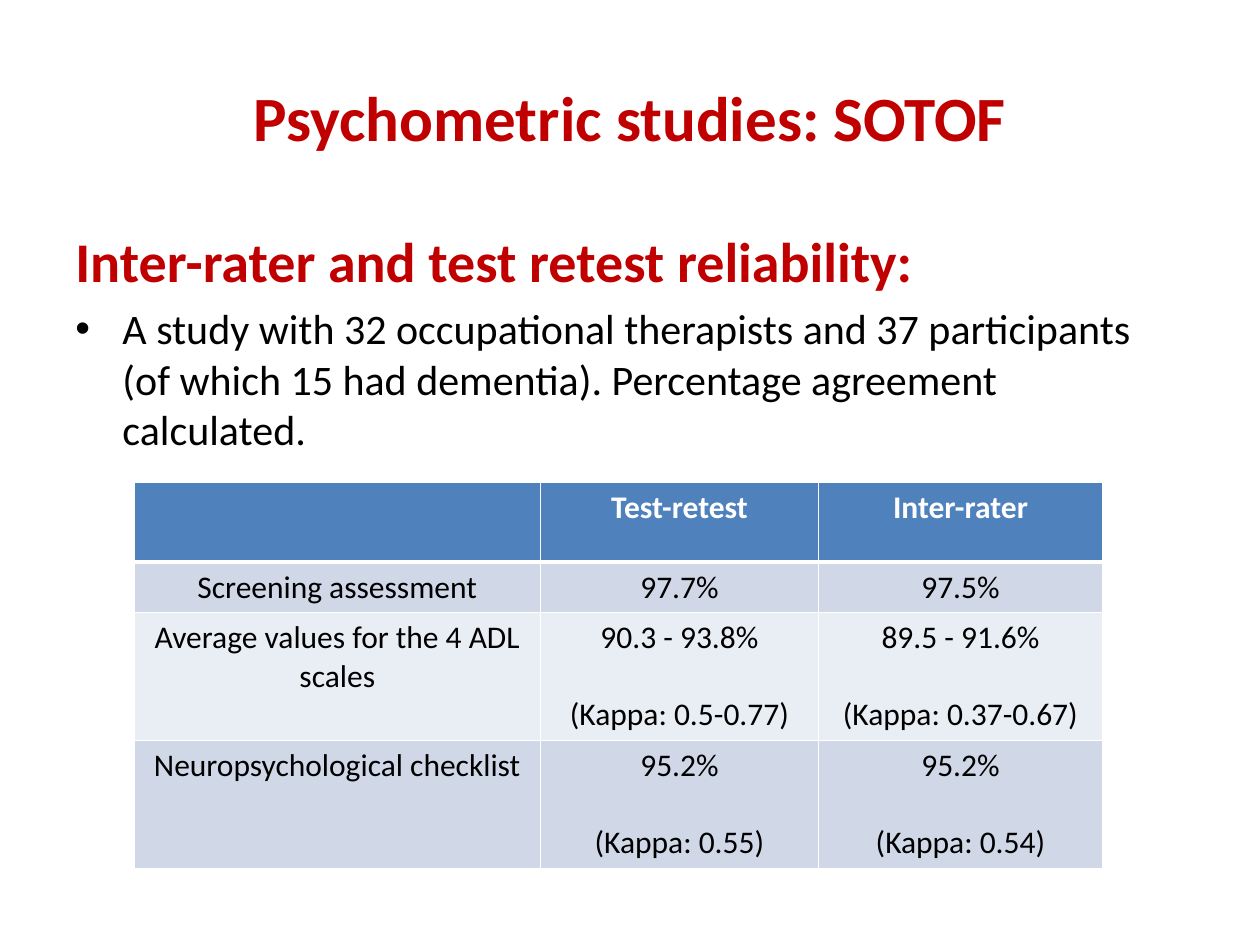
from dataclasses import dataclass

from lxml import etree
from pptx import Presentation
from pptx.dml.color import RGBColor
from pptx.enum.text import MSO_ANCHOR, PP_ALIGN
from pptx.oxml.ns import qn
from pptx.util import Cm, Pt

CENTER, LEFT = PP_ALIGN.CENTER, PP_ALIGN.LEFT
TOP, MIDDLE = MSO_ANCHOR.TOP, MSO_ANCHOR.MIDDLE
BLANK_LAYOUT = 6


@dataclass(frozen=True)
class Theme:
    font: str = "Calibri"
    accent: str = "C00000"
    ink: str = "000000"
    white: str = "FFFFFF"
    header: str = "4F81BD"
    bands: tuple = ("D0D8E8", "E9EDF4")
    title_size: int = 36
    heading_size: int = 32
    body_size: int = 24
    table_size: int = 18
    body_gap: int = 5
    cell_gap: int = 22
    thin_line: int = 1
    thick_line: int = 3


class SlideBuilder:
    def __init__(self, slide, theme):
        self.slide = slide
        self.theme = theme

    def style(self, paragraph, size, color, bold=False, align=LEFT):
        paragraph.alignment = align
        font = paragraph.font
        font.name = self.theme.font
        font.size = Pt(size)
        font.bold = bold
        font.color.rgb = RGBColor.from_string(color)

    def text_frame(self, left, top, width, height, anchor=TOP):
        box = self.slide.shapes.add_textbox(Cm(left), Cm(top), Cm(width), Cm(height))
        frame = box.text_frame
        frame.word_wrap = True
        frame.vertical_anchor = anchor
        return frame

    def title(self, text):
        paragraph = self.text_frame(1.27, 0.76, 22.86, 3.18, MIDDLE).paragraphs[0]
        paragraph.text = text
        self.style(paragraph, self.theme.title_size, self.theme.accent, True, CENTER)

    def body(self, heading, bullet):
        frame = self.text_frame(1.27, 4.45, 22.86, 12.57)
        first = frame.paragraphs[0]
        first.text = heading
        self.style(first, self.theme.heading_size, self.theme.accent, True)
        item = frame.add_paragraph()
        item.text = bullet
        item.space_before = Pt(self.theme.body_gap)
        self.add_bullet(item)
        self.style(item, self.theme.body_size, self.theme.ink)

    def add_bullet(self, paragraph):
        properties = paragraph._p.get_or_add_pPr()
        indent = Cm(0.95)
        properties.set("marL", str(indent))
        properties.set("indent", str(-indent))
        etree.SubElement(properties, qn("a:buFont"), typeface="Arial")
        etree.SubElement(properties, qn("a:buChar"), char="•")

    def table(self, rows, left, top, widths, heights):
        frame = self.slide.shapes.add_table(
            len(rows), len(widths), Cm(left), Cm(top), Cm(sum(widths)), Cm(sum(heights)))
        table = frame.table
        for column, width in zip(table.columns, widths):
            column.width = Cm(width)
        for row, height in zip(table.rows, heights):
            row.height = Cm(height)
        for row_index, row in enumerate(rows):
            for column_index, lines in enumerate(row):
                self.cell(table.cell(row_index, column_index), lines, row_index)

    def cell(self, cell, lines, row_index):
        """Fill one cell, with one paragraph for each entry of lines."""
        theme = self.theme
        is_header = row_index == 0
        self.borders(cell, row_index)
        fill = theme.header if is_header else theme.bands[(row_index - 1) % 2]
        cell.fill.solid()
        cell.fill.fore_color.rgb = RGBColor.from_string(fill)
        frame = cell.text_frame
        for index, line in enumerate(lines):
            paragraph = frame.add_paragraph() if index else frame.paragraphs[0]
            paragraph.text = line
            if index:
                paragraph.space_before = Pt(theme.cell_gap)
            color = theme.white if is_header else theme.ink
            self.style(paragraph, theme.table_size, color, is_header, CENTER)

    def borders(self, cell, row_index):
        """Draw thin borders, with a thick one between header and first row."""
        thick_side = {0: "B", 1: "T"}.get(row_index)
        properties = cell._tc.get_or_add_tcPr()
        for side in "LRTB":
            width = self.theme.thick_line if side == thick_side else self.theme.thin_line
            line = etree.SubElement(properties, qn(f"a:ln{side}"), w=str(Pt(width)))
            fill = etree.SubElement(line, qn("a:solidFill"))
            etree.SubElement(fill, qn("a:srgbClr"), val=self.theme.white)


def main():
    deck = Presentation()
    deck.slide_width, deck.slide_height = Cm(25.4), Cm(19.05)
    page = SlideBuilder(deck.slides.add_slide(deck.slide_layouts[BLANK_LAYOUT]), Theme())
    page.title("Psychometric studies: SOTOF")
    page.body(
        "Inter-rater and test retest reliability:",
        "A study with 32 occupational therapists and 37 participants "
        "(of which 15 had dementia). Percentage agreement calculated.")
    rows = [
        [[], ["Test-retest"], ["Inter-rater"]],
        [["Screening assessment"], ["97.7%"], ["97.5%"]],
        [["Average values for the 4 ADL scales"],
         ["90.3 - 93.8%", "(Kappa: 0.5-0.77)"],
         ["89.5 - 91.6%", "(Kappa: 0.37-0.67)"]],
        [["Neuropsychological checklist"],
         ["95.2%", "(Kappa: 0.55)"],
         ["95.2%", "(Kappa: 0.54)"]],
    ]
    page.table(rows, left=2.7, top=9.73, widths=[8.2, 5.6, 5.73],
               heights=[1.6, 1.02, 2.58, 2.58])
    deck.save("out.pptx")


if __name__ == "__main__":
    main()
